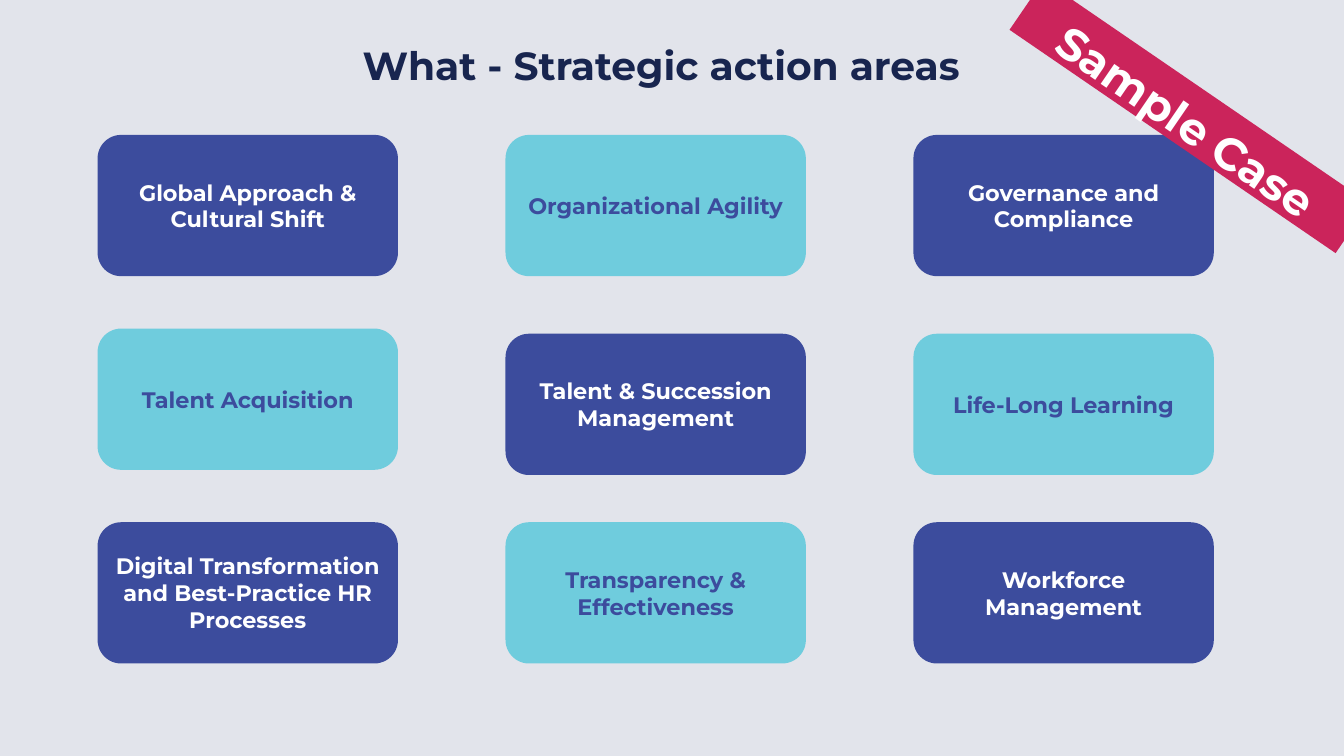
"""Build a slide with a grid of strategic action areas."""
from pptx import Presentation
from pptx.dml.color import RGBColor
from pptx.enum.shapes import MSO_SHAPE
from pptx.enum.text import MSO_ANCHOR, PP_ALIGN
from pptx.util import Cm, Pt

TITLE = "What - Strategic action areas"
RIBBON = "Sample Case"
AREAS = [
    ["Global Approach & Cultural Shift", "Organizational Agility",
     "Governance and Compliance"],
    ["Talent Acquisition", "Talent & Succession Management",
     "Life-Long Learning"],
    ["Digital Transformation and Best-Practice HR Processes",
     "Transparency & Effectiveness", "Workforce Management"],
]
TOPS = [(3.4, 3.4, 3.4), (8.28, 8.41, 8.41), (13.16, 13.16, 13.16)]
LEFT, PITCH = 2.46, 10.28
WIDTH, HEIGHT = 7.57, 3.56

FONT = "Montserrat"
GREY = RGBColor(0xE2, 0xE4, 0xEB)
NAVY = RGBColor(0x18, 0x25, 0x4F)
BLUE = RGBColor(0x3C, 0x4C, 0x9D)
AQUA = RGBColor(0x6F, 0xCC, 0xDD)
RED = RGBColor(0xCB, 0x24, 0x5B)
WHITE = RGBColor(0xFF, 0xFF, 0xFF)
STYLES = [(BLUE, WHITE), (AQUA, BLUE), (BLUE, WHITE),
          (AQUA, BLUE), (BLUE, WHITE), (AQUA, BLUE),
          (BLUE, WHITE), (AQUA, BLUE), (BLUE, WHITE)]
ROUND, RECT = MSO_SHAPE.ROUNDED_RECTANGLE, MSO_SHAPE.RECTANGLE
TOP, MIDDLE = MSO_ANCHOR.TOP, MSO_ANCHOR.MIDDLE
CENTER = PP_ALIGN.CENTER


def write(shape, text, size, color, inset, space=1.0, anchor=MIDDLE):
    frame = shape.text_frame
    frame.word_wrap = True
    frame.vertical_anchor = anchor
    frame.margin_left = frame.margin_right = Cm(inset)
    frame.margin_top = frame.margin_bottom = Cm(inset)
    para = frame.paragraphs[0]
    para.text = text
    para.alignment = CENTER
    para.line_spacing = space
    para.font.name = FONT
    para.font.size = Pt(size)
    para.font.bold = True
    para.font.color.rgb = color


def block(slide, kind, box, fill):
    shape = slide.shapes.add_shape(kind, *map(Cm, box))
    shape.shadow.inherit = False
    shape.fill.solid()
    shape.fill.fore_color.rgb = fill
    shape.line.fill.background()
    return shape


def main():
    deck = Presentation()
    deck.slide_width, deck.slide_height = Cm(33.87), Cm(19.05)
    slide = deck.slides.add_slide(deck.slide_layouts[6])
    slide.background.fill.solid()
    slide.background.fill.fore_color.rgb = GREY

    title = slide.shapes.add_textbox(Cm(3.86), Cm(1.04), Cm(25.6), Cm(1.65))
    write(title, TITLE, 28, NAVY, 0.13, 0.9, TOP)

    for row, names in enumerate(AREAS):
        for col, name in enumerate(names):
            fill, ink = STYLES[row * len(names) + col]
            box = (LEFT + col * PITCH, TOPS[row][col], WIDTH, HEIGHT)
            write(block(slide, ROUND, box, fill), name, 16, ink, 0.2)

    ribbon = block(slide, RECT, (25, 2.18, 9.96, 1.52), RED)
    ribbon.rotation = 34.4
    write(ribbon, RIBBON, 32, WHITE, 0, 1.2)
    deck.save("out.pptx")


if __name__ == "__main__":
    main()
